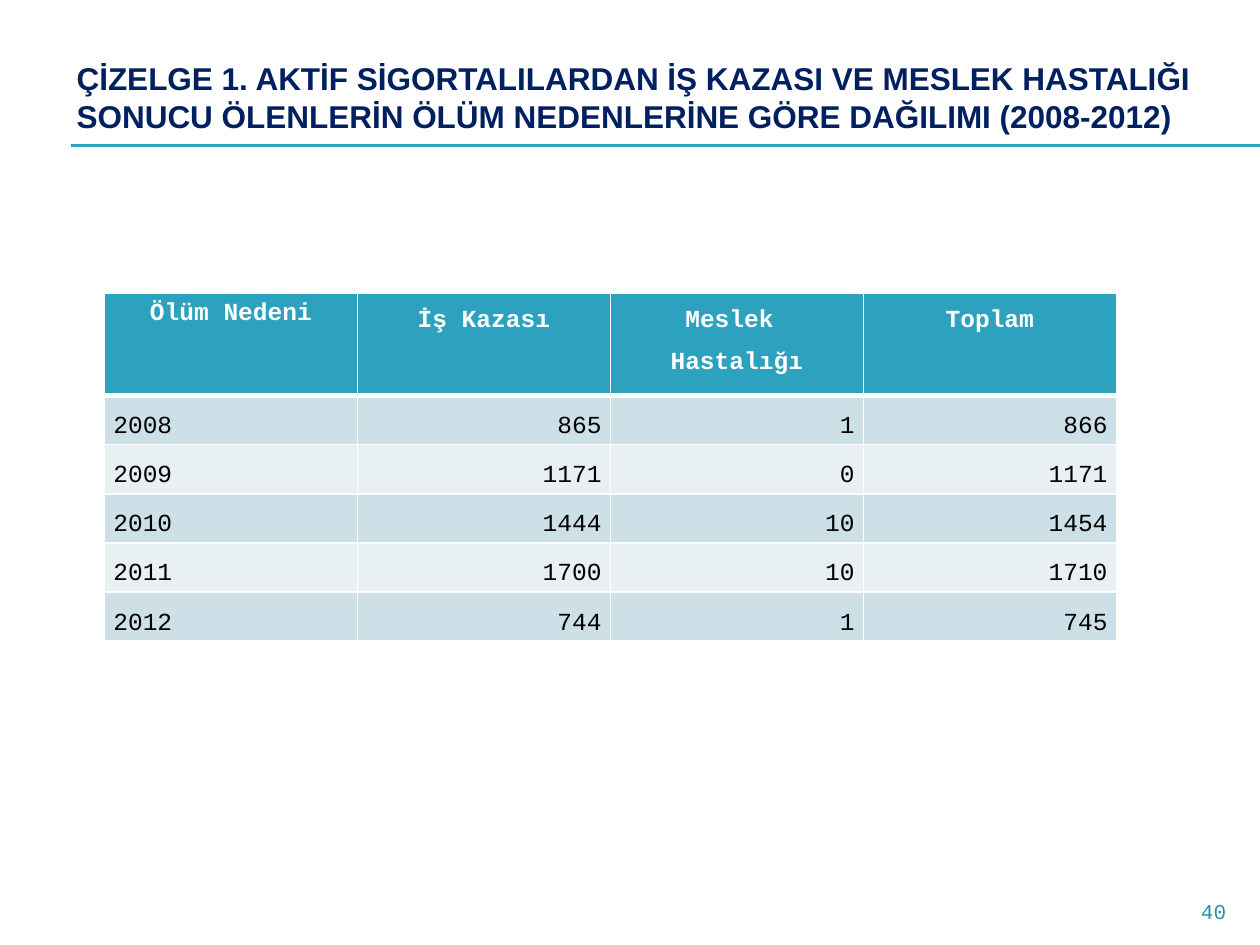
import pptx
import pptx.util
import pptx.dml.color
import pptx.enum.shapes
import pptx.enum.text
import pptx.oxml.ns
from lxml import etree

Inches, Pt = pptx.util.Inches, pptx.util.Pt
Align = pptx.enum.text.PP_ALIGN
Anchor = pptx.enum.text.MSO_ANCHOR
qn = pptx.oxml.ns.qn

COLORS = {
    "teal": "2DA2BF", "navy": "002060", "number": "288FA9", "white": "FFFFFF",
    "black": "000000", "odd": "CDE0E8", "even": "E8F0F4",
}
HEADINGS = ["Ölüm Nedeni", "İş Kazası", "Meslek \nHastalığı", "Toplam"]
DEATHS = [
    (2008, 865, 1, 866),
    (2009, 1171, 0, 1171),
    (2010, 1444, 10, 1454),
    (2011, 1700, 10, 1710),
    (2012, 744, 1, 745),
]


def rgb(color):
    return pptx.dml.color.RGBColor.from_string(COLORS[color])


class SlideBuilder:
    """Holds the style and the current slide."""
    title_font = "Arial"
    body_font = "Courier New"

    def __init__(self, slide):
        self.slide = slide

    def fill_text(self, frame, text, font, size, color, bold=False,
                  align=Align.LEFT, spacing=1.0):
        frame.text = text
        frame.word_wrap = True
        for paragraph in frame.paragraphs:
            paragraph.alignment = align
            paragraph.line_spacing = spacing
            paragraph.font.name = font
            paragraph.font.size = Pt(size)
            paragraph.font.bold = bold
            paragraph.font.color.rgb = rgb(color)

    def text(self, box, text, anchor=Anchor.TOP, bottom=0.05, **style):
        frame = self.slide.shapes.add_textbox(*map(Inches, box)).text_frame
        frame.vertical_anchor = anchor
        frame.margin_bottom = Inches(bottom)
        self.fill_text(frame, text, **style)

    def rule(self, left, right, y):
        line = self.slide.shapes.add_connector(
            pptx.enum.shapes.MSO_CONNECTOR.STRAIGHT,
            Inches(left), Inches(y), Inches(right), Inches(y))
        line.line.color.rgb = rgb("teal")
        line.line.width = Pt(0.75)
        etree.SubElement(line._element.spPr, qn("a:effectLst"))

    def borders(self, cell, top, bottom):
        properties = cell._tc.get_or_add_tcPr()
        for side, width in (("L", 1), ("R", 1), ("T", top), ("B", bottom)):
            edge = etree.SubElement(properties, qn(f"a:ln{side}"), w=str(Pt(width)))
            fill = etree.SubElement(edge, qn("a:solidFill"))
            etree.SubElement(fill, qn("a:srgbClr"), val=COLORS["white"])

    def table(self, box, headings, records, header_height, row_height):
        rows = [headings, *records]
        table = self.slide.shapes.add_table(
            len(rows), len(headings), *map(Inches, box)).table
        for r, values in enumerate(rows):
            header = r == 0
            table.rows[r].height = Inches(header_height if header else row_height)
            for c, value in enumerate(values):
                cell = table.cell(r, c)
                corner = header and c == 0
                self.borders(cell, 3 if r == 1 else 1, 3 if header else 1)
                cell.fill.solid()
                cell.fill.fore_color.rgb = rgb(
                    "teal" if header else "odd" if r % 2 else "even")
                cell.vertical_anchor = Anchor.TOP if header else Anchor.MIDDLE
                if not corner:
                    cell.margin_left = cell.margin_right = Inches(0.07)
                    cell.margin_top = cell.margin_bottom = 0
                align = Align.CENTER if header else Align.RIGHT if c else Align.LEFT
                self.fill_text(cell.text_frame, str(value), self.body_font, 14,
                               "white" if header else "black", header, align,
                               1.0 if corner else 1.5)


def main():
    deck = pptx.Presentation()
    deck.slide_width, deck.slide_height = Inches(10), Inches(7.5)
    builder = SlideBuilder(deck.slides.add_slide(deck.slide_layouts[6]))

    # Double rule under the title
    for y in (1.15, 1.16):
        builder.rule(0.56, 10, y)

    # Title
    builder.text(
        (0.51, 0.13, 9.13, 1.02),
        "ÇİZELGE 1. AKTİF SİGORTALILARDAN İŞ KAZASI VE MESLEK HASTALIĞI "
        "SONUCU ÖLENLERİN ÖLÜM NEDENLERİNE GÖRE DAĞILIMI (2008-2012)",
        anchor=Anchor.BOTTOM, bottom=0.08,
        font=builder.title_font, size=18, color="navy", bold=True)

    # Deaths by cause and year
    builder.table((0.83, 2.33, 8.03, 2.76), HEADINGS, DEATHS, 0.81, 0.39)

    # Slide number
    builder.text((9, 7.08, 0.83, 0.27), "40", font=builder.body_font,
                 size=12, color="number", align=Align.RIGHT)

    deck.save("out.pptx")


if __name__ == "__main__":
    main()
